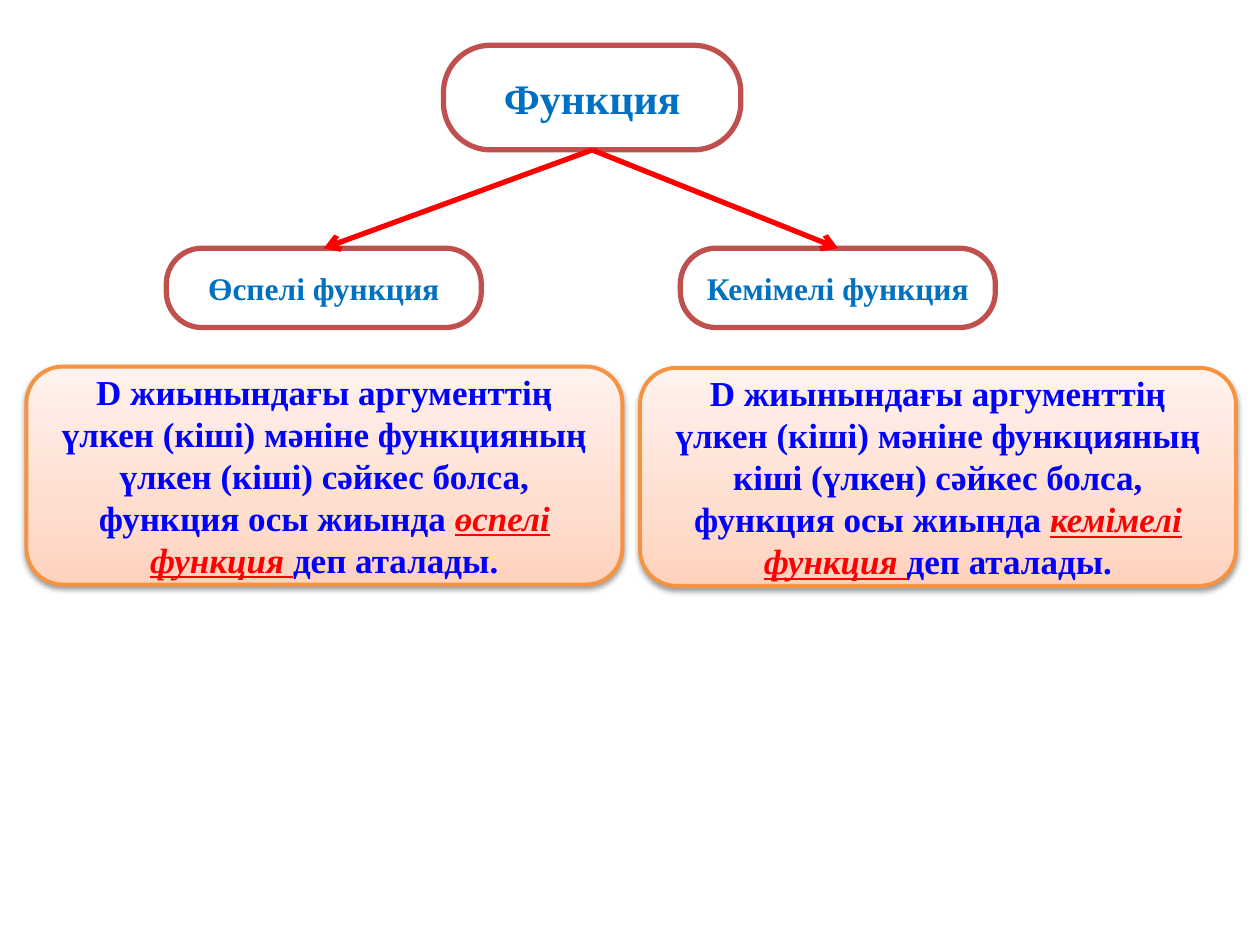
from copy import deepcopy

from lxml import etree
from pptx import Presentation
from pptx.dml.color import RGBColor
from pptx.enum.shapes import MSO_CONNECTOR, MSO_SHAPE
from pptx.enum.text import MSO_ANCHOR, PP_ALIGN
from pptx.oxml import parse_xml
from pptx.oxml.ns import qn
from pptx.util import Inches, Pt

ROUNDED = MSO_SHAPE.ROUNDED_RECTANGLE
STRAIGHT = MSO_CONNECTOR.STRAIGHT
MIDDLE = MSO_ANCHOR.MIDDLE
CENTER = PP_ALIGN.CENTER
TOP_SITE, BOTTOM_SITE = 0, 2

FONT = "Times New Roman"
ROOT = ("Функция", (3.52, 0.36, 2.36, 0.83), 24)
BRANCHES = [
    {
        "label": ("Өспелі функция", (1.32, 1.97, 2.5, 0.63), 18),
        "place": (0.21, 2.91, 4.73, 1.73),
        "order": "үлкен (кіші)",
        "term": "өспелі функция ",
    },
    {
        "label": ("Кемімелі функция", (5.4, 1.97, 2.5, 0.63), 18),
        "place": (5.08, 2.92, 4.73, 1.73),
        "order": "кіші (үлкен)",
        "term": "кемімелі функция ",
    },
]
DEFINITION = (
    "D жиынындағы аргументтің үлкен (кіші) мәніне функцияның "
    "{} сәйкес болса, функция осы жиында "
)
ENDING = "деп аталады."
GRADIENT = [(0, "FFD2BD"), (0.35, "FFDED0"), (1, "FFF2ED")]
SHADOW = (
    '<a:outerShdw xmlns:a="http://schemas.openxmlformats.org/drawingml/2006/main" '
    'blurRad="40000" dist="20000" dir="5400000" rotWithShape="0">'
    '<a:srgbClr val="000000"><a:alpha val="38000"/></a:srgbClr></a:outerShdw>'
)


def color(value):
    return RGBColor.from_string(value)


def add_box(slide, place, line_color, line_width, size, text_color):
    box = slide.shapes.add_shape(ROUNDED, *map(Inches, place))
    box.shadow.inherit = False
    box.line.color.rgb = color(line_color)
    box.line.width = Pt(line_width)
    box.text_frame.word_wrap = True
    box.text_frame.vertical_anchor = MIDDLE
    para = box.text_frame.paragraphs[0]
    para.alignment = CENTER
    para.font.name = FONT
    para.font.size = Pt(size)
    para.font.bold = True
    para.font.color.rgb = color(text_color)
    return box


def add_label(slide, text, place, size):
    box = add_box(slide, place, "C0504D", 4 - 1, size, "0070C0")
    box.adjustments[0] = 0.45
    box.fill.solid()
    box.fill.fore_color.rgb = color("FFFFFF")
    box.text_frame.paragraphs[0].add_run().text = text
    return box


def add_definition(slide, branch):
    box = add_box(slide, branch["place"], "F69240", 2.25, 20, "0000FF")
    box.fill.gradient()
    box.fill.gradient_angle = 90
    stop_list = box._element.spPr.find(".//" + qn("a:gsLst"))
    stop_list.append(deepcopy(stop_list[-1]))
    for stop, (position, value) in zip(box.fill.gradient_stops, GRADIENT):
        stop.position = position
        stop.color.rgb = color(value)
    box._element.spPr.find(qn("a:effectLst")).append(parse_xml(SHADOW))

    para = box.text_frame.paragraphs[0]
    para.add_run().text = DEFINITION.format(branch["order"])
    term = para.add_run()
    term.text = branch["term"]
    term.font.italic = True
    term.font.underline = True
    term.font.color.rgb = color("FF0000")
    para.add_run().text = ENDING


def add_arrow(slide, start, end):
    arrow = slide.shapes.add_connector(STRAIGHT, 0, 0, 0, 0)
    arrow.begin_connect(start, BOTTOM_SITE)
    arrow.end_connect(end, TOP_SITE)
    arrow.line.color.rgb = color("FF0000")
    arrow.line.width = Pt(3)
    etree.SubElement(arrow.line._get_or_add_ln(), qn("a:tailEnd"), type="arrow")
    etree.SubElement(arrow._element.spPr, qn("a:effectLst"))


def main():
    deck = Presentation()
    deck.slide_width, deck.slide_height = Inches(10), Inches(7.5)
    slide = deck.slides.add_slide(deck.slide_layouts[6])
    root = add_label(slide, *ROOT)
    labels = [add_label(slide, *branch["label"]) for branch in BRANCHES]
    for label in labels:
        add_arrow(slide, root, label)
    for branch in BRANCHES:
        add_definition(slide, branch)
    deck.save("out.pptx")


if __name__ == "__main__":
    main()
